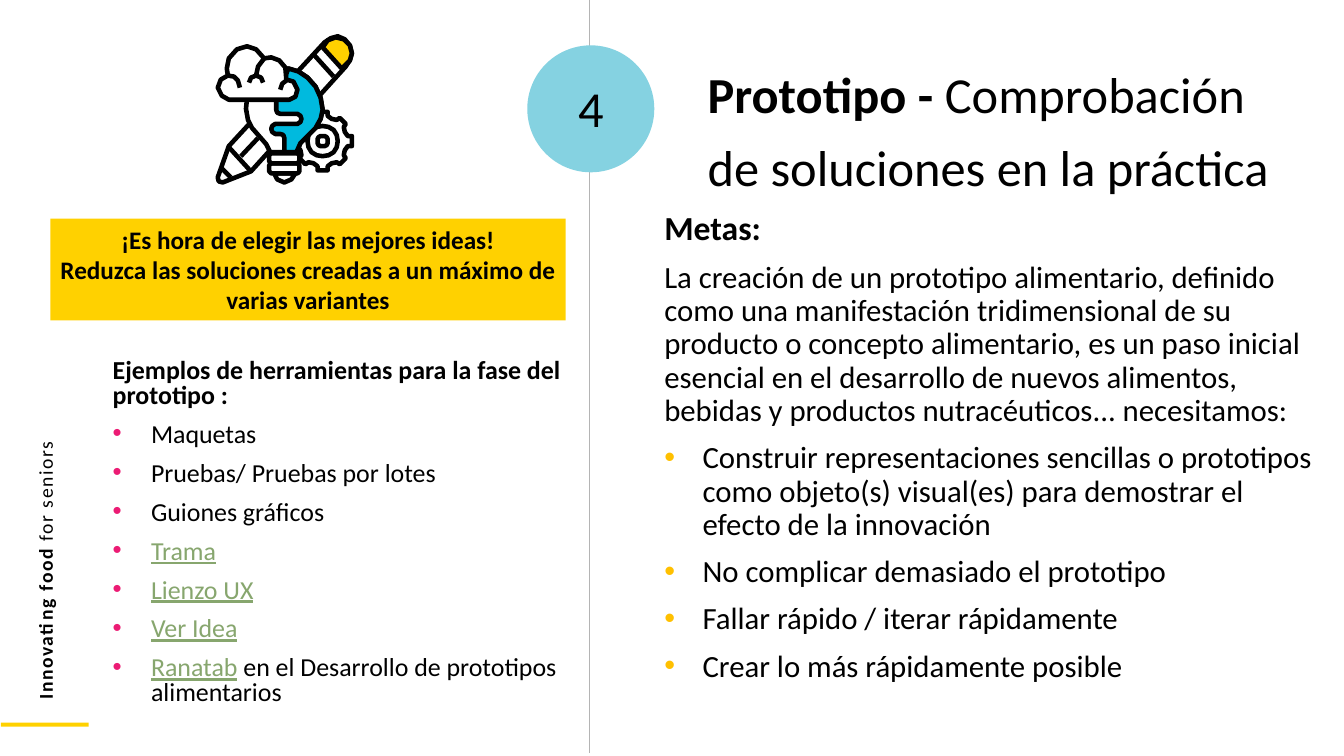
"""Builds the slide on the prototype phase."""
import math

from lxml import etree
from pptx import Presentation
from pptx.dml.color import RGBColor
from pptx.enum.shapes import MSO_CONNECTOR, MSO_SHAPE
from pptx.enum.text import MSO_ANCHOR, PP_ALIGN
from pptx.oxml.ns import qn
from pptx.util import Pt

PX = 9144
STRAIGHT = MSO_CONNECTOR.STRAIGHT
RECTANGLE, OVAL = MSO_SHAPE.RECTANGLE, MSO_SHAPE.OVAL
LEFT, CENTER = PP_ALIGN.LEFT, PP_ALIGN.CENTER
TOP, MIDDLE = MSO_ANCHOR.TOP, MSO_ANCHOR.MIDDLE
COLORS = {
    "black": "000000", "white": "FFFFFF", "ink": "010101", "divider": "B4B4B4",
    "circle": "85D2E1", "yellow": "FFD100", "blue": "00BADE",
    "amber": "FFC000", "pink": "EC1B74", "link": "87A66E",
}
BOLD = {"bold": True}
LINK = {"color": "link", "underline": True}
ICON_STROKE = Pt(3.25)

PENCIL = [(216, 176), (227, 145), (322, 42), (328, 38), (335, 36), (342, 39), (347, 45),
          (349, 53), (347, 60), (343, 66), (249, 170), (221, 181), (217, 180)]
ERASER = [(320, 47), (325, 40), (333, 37), (341, 39), (347, 45), (349, 53), (347, 60), (339, 68)]
PENCIL_MARKS = [[(312, 55), (331, 76)], [(227, 146), (248, 169)],
                [(239, 155), (256, 137)], [(220, 167), (229, 176)]]
BULB_LEFT = [(268, 151), (264, 143), (257, 135), (250, 127), (246, 119), (244, 108), (245, 98),
             (255, 82), (270, 71), (286, 68)]
BULB_RIGHT = [(286, 68), (296, 71), (305, 77), (313, 86), (318, 97), (320, 109), (318, 118),
              (313, 127), (305, 135), (298, 142), (294, 151)]
FILAMENT = [(282, 151), (282, 137), (281, 134), (278, 133), (273, 133), (270, 131), (269, 128),
            (270, 125), (273, 123), (295, 123), (298, 121), (299, 118), (298, 115), (295, 113),
            (278, 113), (275, 112), (274, 109), (274, 99)]
BULB_TIP = [(272, 172), (275, 178), (282, 181), (289, 178), (293, 172)]
CLOUD = [(227, 99), (220, 95), (216, 87), (219, 79), (226, 75), (225, 68), (227, 58), (235, 49),
         (245, 46), (254, 49), (262, 58), (269, 57), (277, 60), (283, 67), (284, 79), (291, 81),
         (295, 89), (293, 96), (287, 99)]
CLOUD_CURLS = [[(238, 87), (236, 80), (232, 76), (226, 75)],
               [(247, 82), (249, 77), (254, 75), (259, 77), (261, 82)],
               [(254, 75), (256, 66), (262, 58)],
               [(278, 89), (280, 83), (284, 80)]]


def rgb(name):
    """Return a named colour."""
    return RGBColor.from_string(COLORS[name])


def paint(shape, fill=None, line=None):
    """Set the fill and outline of a shape."""
    shape.shadow.inherit = False
    if fill:
        shape.fill.solid()
        shape.fill.fore_color.rgb = rgb(fill)
    else:
        shape.fill.background()
    if line:
        shape.line.color.rgb = rgb(line)
        shape.line.width = ICON_STROKE
    else:
        shape.line.fill.background()


def add_block(slide, kind, box, fill):
    """Add a preset shape."""
    shape = slide.shapes.add_shape(kind, *(value * PX for value in box))
    paint(shape, fill)
    return shape


def add_outline(slide, closed, fill=None, opened=()):
    """Add one freeform of closed and open contours."""
    contours = [(points, True) for points in closed] + [(points, False) for points in opened]
    builder = slide.shapes.build_freeform(*contours[0][0][0], scale=PX)
    for index, (points, close) in enumerate(contours):
        if index:
            builder.move_to(*points[0])
        builder.add_line_segments(points[1:], close=close)
    paint(builder.convert_to_shape(), fill, "ink")


def add_divider(slide, x, top, bottom):
    """Add the vertical divider."""
    line = slide.shapes.add_connector(STRAIGHT, x * PX, top * PX, x * PX, bottom * PX)
    line.line.color.rgb = rgb("divider")
    line.line.width = Pt(0.75)
    etree.SubElement(line._element.spPr, qn("a:effectLst"))


def add_bullet(paragraph, color):
    """Give a paragraph a coloured bullet and hanging indent."""
    properties = paragraph._p.get_or_add_pPr()
    properties.set("marL", str(38 * PX))
    properties.set("indent", str(-38 * PX))
    holder = etree.SubElement(properties, qn("a:buClr"))
    etree.SubElement(holder, qn("a:srgbClr"), val=COLORS[color])
    etree.SubElement(properties, qn("a:buFont"), typeface="Arial")
    etree.SubElement(properties, qn("a:buChar"), char="•")


def add_run(paragraph, text, style, spacing=None):
    """Add a run with the given font values."""
    run = paragraph.add_run()
    run.text = text
    values = {"name": "Calibri", "bold": False, "color": "black", **style}
    run.font.color.rgb = rgb(values.pop("color"))
    for name, value in values.items():
        setattr(run.font, name, value)
    if spacing:
        run._r.get_or_add_rPr().set("spc", str(spacing))


def fill_text(shape, paragraphs, size, align=LEFT, anchor=TOP, leading=None, gap=0,
              bullet=None, spacing=None):
    """Write paragraphs of runs, bulleting those flagged."""
    frame = shape.text_frame
    frame.word_wrap = True
    frame.vertical_anchor = anchor
    for index, (bulleted, runs) in enumerate(paragraphs):
        paragraph = frame.add_paragraph() if index else frame.paragraphs[0]
        layout = {"alignment": align, "line_spacing": leading,
                  "space_before": Pt(gap if index else 0)}
        for name, value in layout.items():
            setattr(paragraph, name, value)
        if bulleted:
            add_bullet(paragraph, bullet)
        for text, style in runs:
            add_run(paragraph, text, {"size": Pt(size), **style}, spacing)


def add_text(slide, box, paragraphs, size, **options):
    """Add a text box."""
    shape = slide.shapes.add_textbox(*(value * PX for value in box))
    fill_text(shape, paragraphs, size, **options)
    return shape


def radial_points(x, y, profile, repeats):
    """Return an outline that repeats a profile of angles and radii around x, y."""
    polar = [(math.radians(turn * 360 / repeats + angle), radius)
             for turn in range(repeats) for angle, radius in profile]
    return [(round(x + radius * math.cos(angle)), round(y + radius * math.sin(angle)))
            for angle, radius in polar]


def add_idea_icon(slide):
    """Draw the pencil, gear, bulb and cloud."""
    add_outline(slide, [PENCIL], "white", PENCIL_MARKS)
    add_outline(slide, [ERASER], "yellow")
    tooth = [(-11, 25), (-9, 29), (9, 29), (11, 25), (22, 24)]
    rings = [radial_points(320, 140, [(0, radius)], 16) for radius in (15, 5)]
    add_outline(slide, [radial_points(320, 140, tooth, 8)] + rings, "white")
    add_outline(slide, [BULB_LEFT + BULB_RIGHT], "white")
    add_outline(slide, [BULB_RIGHT + FILAMENT], "blue")
    bands = [[(269, top), (295, top), (297, top + 2), (297, top + 8), (295, top + 10),
              (269, top + 10), (267, top + 8), (267, top + 2)] for top in (152, 162)]
    add_outline(slide, bands + [BULB_TIP], "white")
    add_outline(slide, [CLOUD], "white")
    add_outline(slide, [], opened=CLOUD_CURLS)


def main():
    """Build and save the slide."""
    presentation = Presentation()
    presentation.slide_width, presentation.slide_height = 1333 * PX, 750 * PX
    slide = presentation.slides.add_slide(presentation.slide_layouts[6])
    add_divider(slide, 585, -3, 747)
    add_block(slide, OVAL, (523, 45, 126, 126), "circle")
    add_block(slide, RECTANGLE, (1, 717, 87, 4), "yellow")
    slogan = [("Innovating food ", BOLD), ("for seniors", {})]
    add_text(slide, (-155, 487, 400, 34), [(False, slogan)], 14, spacing=110).rotation = 270

    goals = ["Construir representaciones sencillas o prototipos como objeto(s) visual(es) "
             "para demostrar el efecto de la innovación",
             "No complicar demasiado el prototipo",
             "Fallar rápido / iterar rápidamente",
             "Crear lo más rápidamente posible"]
    purpose = ("La creación de un prototipo alimentario, definido como una manifestación "
               "tridimensional de su producto o concepto alimentario, es un paso inicial esencial "
               "en el desarrollo de nuevos alimentos, bebidas y productos nutracéuticos... necesitamos:")
    body = [(False, [("Metas:", {"size": Pt(24), **BOLD})]), (False, [(purpose, {})])]
    body += [(True, [(goal, {})]) for goal in goals]
    add_text(slide, (649, 205, 662, 441), body, 22, leading=0.9, gap=10, bullet="amber")

    title = [("Prototipo - ", BOLD), ("Comprobación de soluciones en la práctica", {})]
    add_text(slide, (692, 46, 594, 180), [(False, title)], 36, leading=1.2)

    tools = [(False, [("Ejemplos de herramientas para la fase del prototipo :", BOLD)])]
    tools += [(True, [(name, {})])
              for name in ("Maquetas", "Pruebas/ Pruebas por lotes", "Guiones gráficos")]
    tools += [(True, [(name, LINK)]) for name in ("Trama", "Lienzo UX", "Ver Idea")]
    tools.append((True, [("Ranatab", LINK), (" en el Desarrollo de prototipos alimentarios", {})]))
    add_text(slide, (102, 352, 474, 376), tools, 18.5, leading=0.8, gap=10, bullet="pink")

    add_text(slide, (523, 78, 126, 94), [(False, [("4", {})])], 36, align=CENTER, leading=0.9)
    banner = add_block(slide, RECTANGLE, (50, 217, 511, 101), "yellow")
    calls = ["¡Es hora de elegir las mejores ideas!",
             "Reduzca las soluciones creadas a un máximo de varias variantes"]
    fill_text(banner, [(False, [(call, BOLD)]) for call in calls], 18, align=CENTER, anchor=MIDDLE)
    add_idea_icon(slide)
    presentation.save("out.pptx")


if __name__ == "__main__":
    main()
